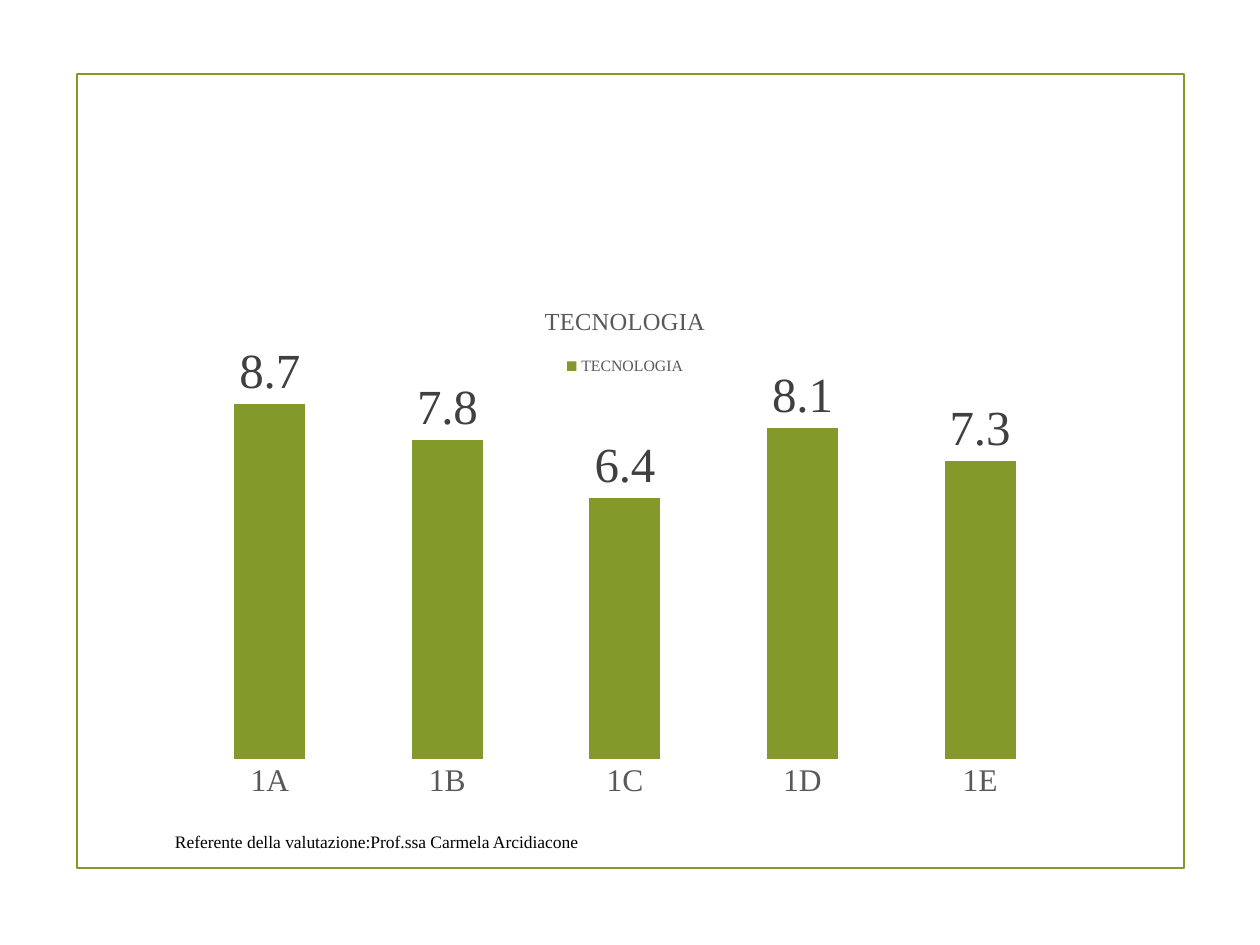
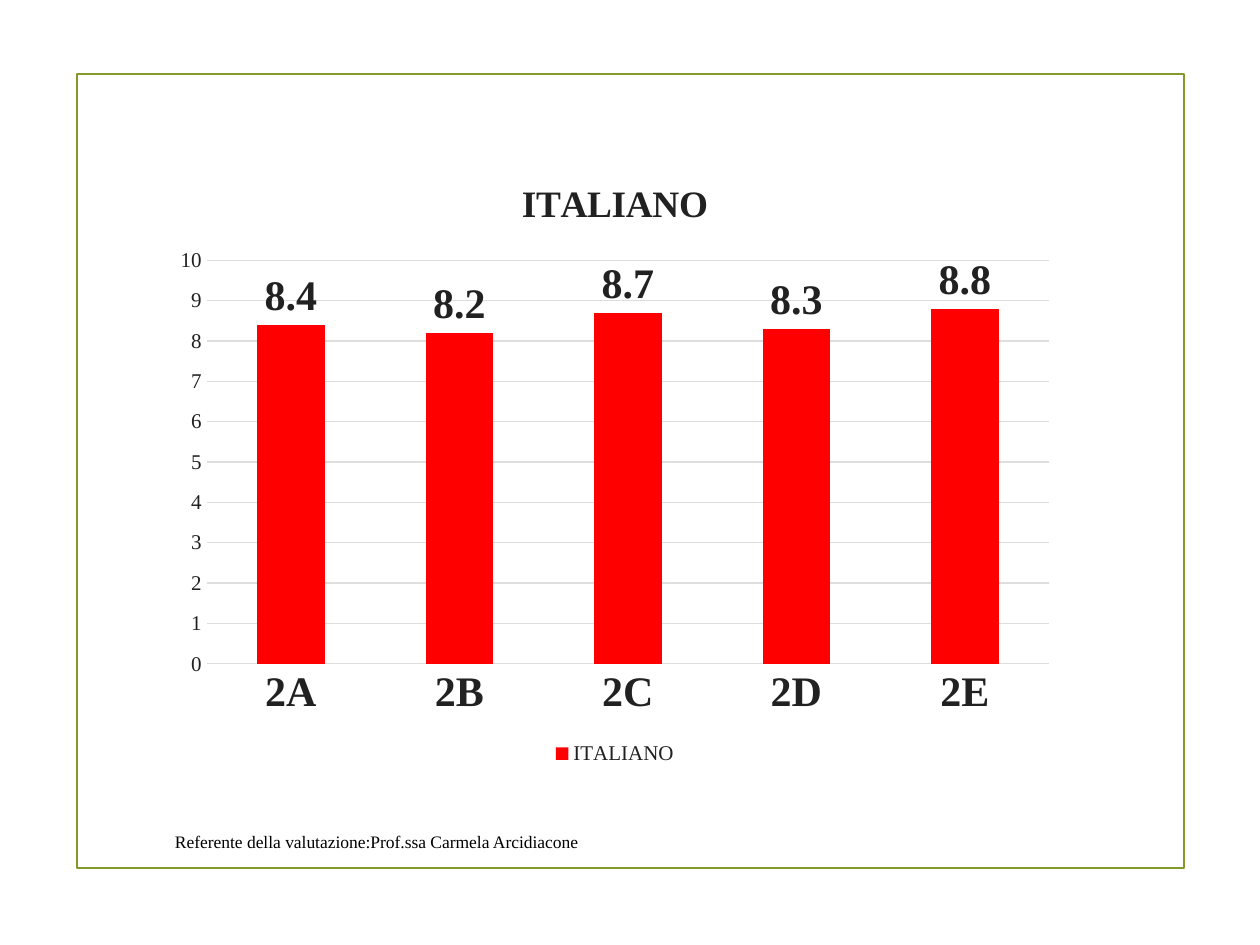
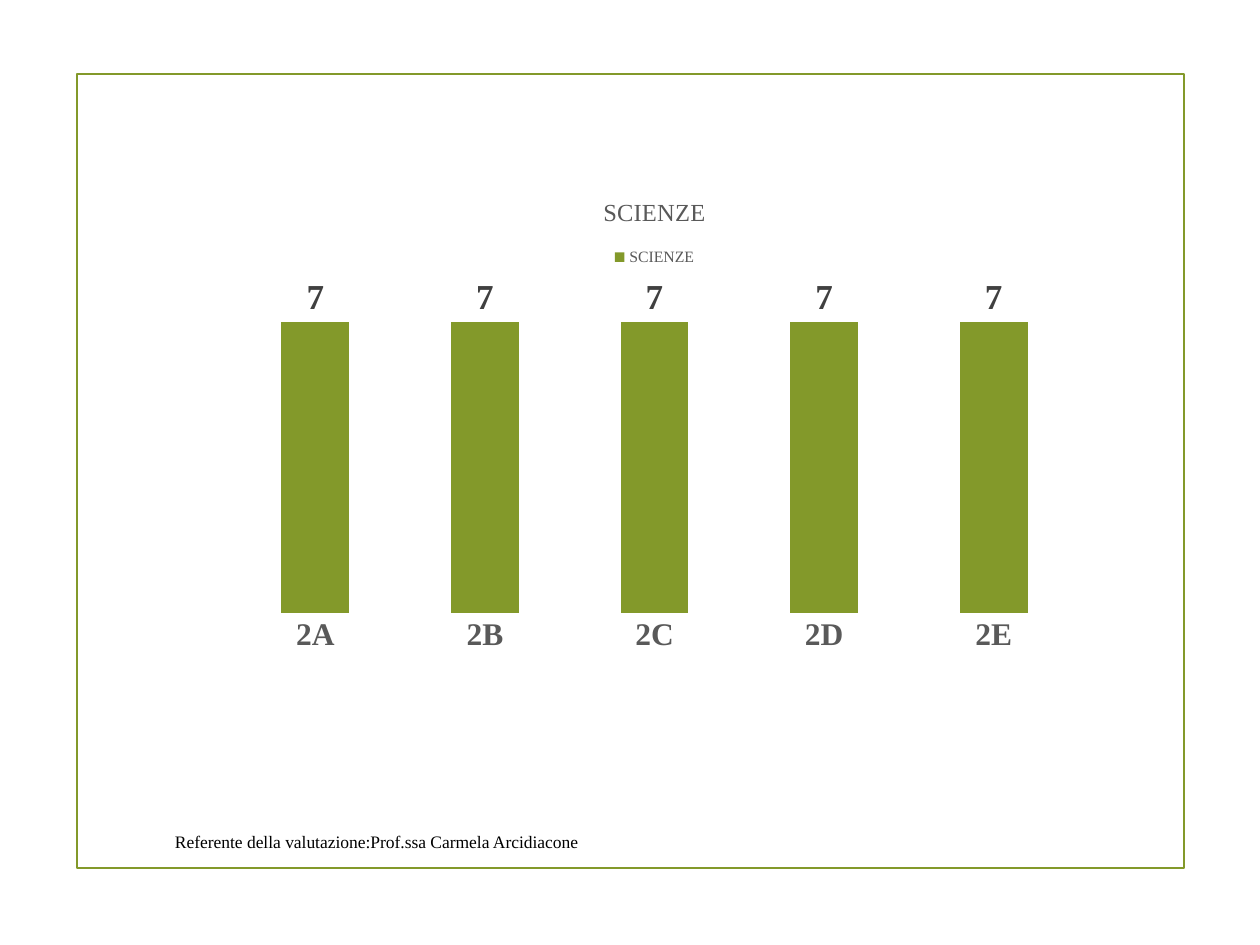
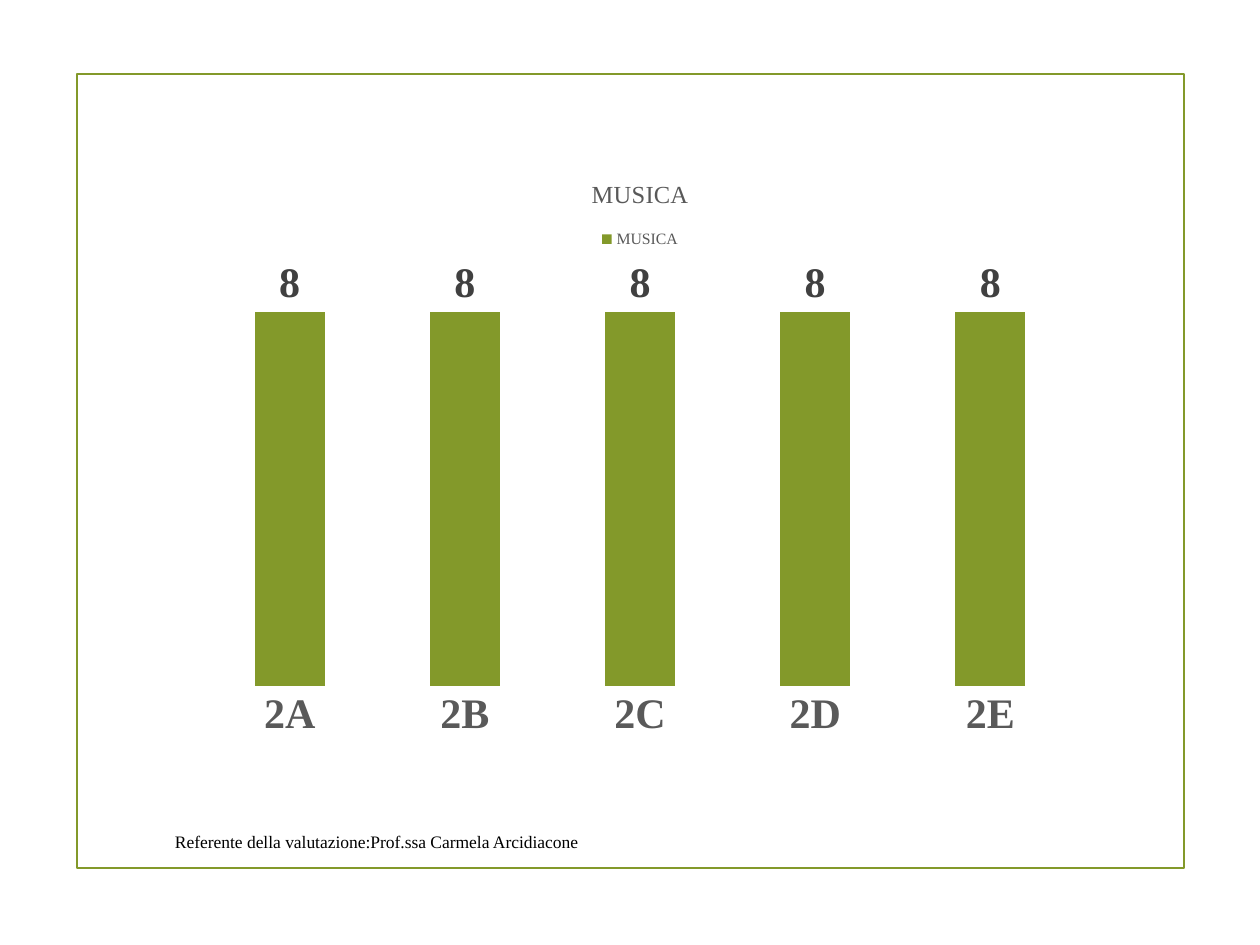
from pptx import Presentation
from pptx.chart.data import CategoryChartData as Data
from pptx.dml.color import RGBColor as Rgb
from pptx.enum.chart import XL_CHART_TYPE as Kind, XL_LABEL_POSITION as Spot
from pptx.enum.chart import XL_LEGEND_POSITION as Side, XL_TICK_MARK as Tick
from pptx.enum.shapes import MSO_SHAPE as Form
from pptx.enum.text import MSO_ANCHOR as Anchor
from pptx.oxml import parse_xml
from pptx.oxml.ns import nsdecls
from pptx.util import Inches, Pt

FACE = "Times New Roman"
HUES = {"green": "83992A", "red": "FF0000", "black": "000000", "ink": "212121",
        "dark": "404040", "gray": "595959", "rule": "DEDEDE"}
COLS, ROWS = 100, 75
FRAME = (6.1, 5.9, 87.9, 63)
FOOT = (12.9, 65.2, 55.8, 3.1)
NOTE = "Referente della valutazione:Prof.ssa Carmela Arcidiacone"

PLAIN = {"bar": "green", "text": "gray", "mark": "dark", "title": (14, False),
         "key": 9, "side": Side.TOP, "scale": False}
BOLD = {"bar": "red", "text": "ink", "mark": "ink", "title": (21.3, True),
        "key": 12, "side": Side.BOTTOM, "scale": True}

CHARTS = [
    {"name": "TECNOLOGIA", "year": 1, "marks": [8.7, 7.8, 6.4, 8.1, 7.3], "top": 10,
     "box": (12.9, 22.5, 73.4, 41), "cat": (18, False), "label": (28, False),
     "look": PLAIN, "plot": (0.02, 0.13, 0.96, 0.79)},
    {"name": "ITALIANO", "year": 2, "marks": [8.4, 8.2, 8.7, 8.3, 8.8], "top": 10,
     "box": (12.9, 12.3, 71.8, 48.8), "cat": (24, True), "label": (24, True),
     "look": BOLD},
    {"name": "SCIENZE", "year": 2, "marks": [7] * 5, "top": 8,
     "box": (16.9, 13.9, 70.1, 38.6), "cat": (18, True), "label": (20, True),
     "look": PLAIN},
    {"name": "MUSICA", "year": 2, "marks": [8] * 5, "top": 9,
     "box": (14.6, 12.3, 72.4, 47.2), "cat": (24, True), "label": (24, True),
     "look": PLAIN},
]

deck = Presentation()
deck.slide_width, deck.slide_height = Inches(10), Inches(7.5)


def hue(name):
    return Rgb.from_string(HUES[name])


def place(box):
    x, y, w, h = box
    col, row = deck.slide_width / COLS, deck.slide_height / ROWS
    return [int(n) for n in (x * col, y * row, w * col, h * row)]


def style(font, size, tone, bold=False):
    font.name, font.size, font.bold = FACE, Pt(size), bold
    font.color.rgb = hue(tone)


def rule(line):
    line.color.rgb = hue("rule")
    line.width = Pt(0.75)


def add_base(slide):
    frame = slide.shapes.add_shape(Form.RECTANGLE, *place(FRAME))
    frame.shadow.inherit = False
    frame.fill.background()
    frame.line.color.rgb = hue("green")
    frame.line.width = Pt(1.25)
    text = slide.shapes.add_textbox(*place(FOOT)).text_frame
    text.word_wrap = True
    text.vertical_anchor = Anchor.MIDDLE
    text.text = NOTE
    style(text.paragraphs[0].runs[0].font, 10, "black")


def set_plot(chart, plot):
    sizes = "".join(f'<c:{tag} val="{val}"/>' for tag, val in zip("xywh", plot))
    layout = parse_xml(
        f'<c:layout {nsdecls("c")}><c:manualLayout><c:layoutTarget val="inner"/>'
        f'<c:xMode val="edge"/><c:yMode val="edge"/>{sizes}</c:manualLayout></c:layout>')
    area = chart.element.chart.plotArea
    for old in area.findall(layout.tag):
        area.remove(old)
    area.insert(0, layout)


def add_axes(chart, item, look):
    cat, val = chart.category_axis, chart.value_axis
    cat.major_tick_mark = val.major_tick_mark = Tick.NONE
    style(cat.tick_labels.font, item["cat"][0], look["text"], item["cat"][1])
    val.minimum_scale, val.maximum_scale = 0, item["top"]
    val.visible = val.has_major_gridlines = look["scale"]
    val.format.line.fill.background()
    if look["scale"]:
        val.major_unit = 1
        style(val.tick_labels.font, 12, look["text"])
        rule(val.major_gridlines.format.line)
        rule(cat.format.line)
    else:
        cat.format.line.fill.background()


def add_marks(slide, item):
    look = item["look"]
    data = Data()
    data.categories = [f"{item['year']}{group}" for group in "ABCDE"]
    data.add_series(item["name"], item["marks"])
    chart = slide.shapes.add_chart(Kind.COLUMN_CLUSTERED, *place(item["box"]), data).chart
    style(chart.font, 10, "black")

    chart.has_title = True
    title = chart.chart_title
    title.include_in_layout = False
    title.text_frame.text = item["name"]
    size, bold = look["title"]
    style(title.text_frame.paragraphs[0].runs[0].font, size, look["text"], bold)

    chart.has_legend = True
    chart.legend.position = look["side"]
    chart.legend.include_in_layout = False
    style(chart.legend.font, look["key"], look["text"])

    plot = chart.plots[0]
    plot.gap_width = 150
    plot.vary_by_categories = False
    fill = plot.series[0].format.fill
    fill.solid()
    fill.fore_color.rgb = hue(look["bar"])
    labels = plot.series[0].data_labels
    labels.show_value = True
    labels.position = Spot.OUTSIDE_END
    size, bold = item["label"]
    style(labels.font, size, look["mark"], bold)

    add_axes(chart, item, look)
    if "plot" in item:
        set_plot(chart, item["plot"])


def main():
    for item in CHARTS:
        slide = deck.slides.add_slide(deck.slide_layouts[6])
        add_base(slide)
        add_marks(slide, item)
    deck.save("out.pptx")


if __name__ == "__main__":
    main()
